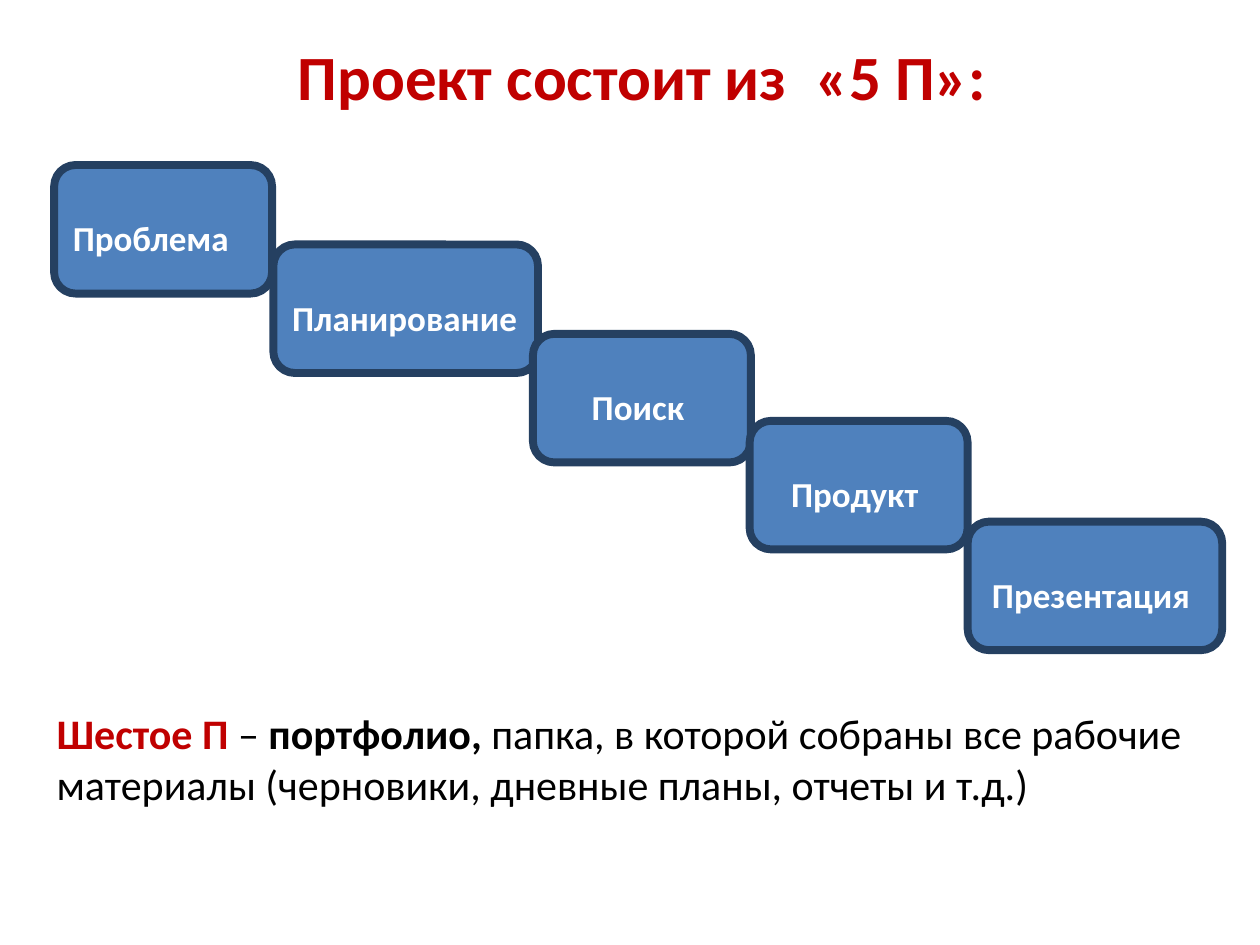
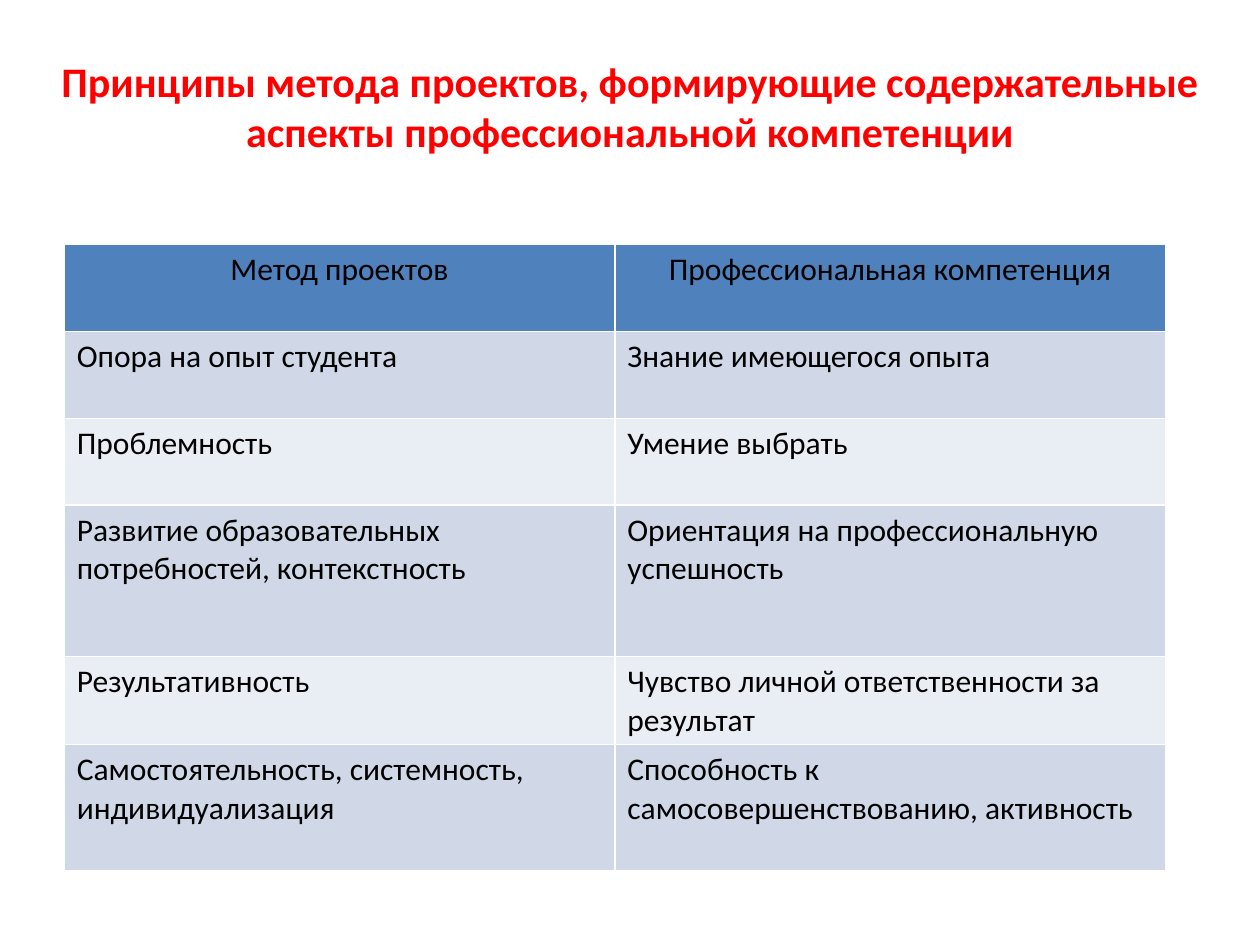
from pptx import Presentation
from pptx.dml.color import RGBColor
from pptx.enum.shapes import MSO_SHAPE as Shape
from pptx.enum.text import MSO_ANCHOR as Anchor, PP_ALIGN as Align
from pptx.util import Inches, Pt

FONT = "Calibri"
BLACK, WHITE = "000000", "FFFFFF"
DARK_RED, RED = "C00000", "FF0000"
BLUE, NAVY = "4F81BD", "254061"
BANDS = ("D0D8E8", "E9EDF4")


def rgb(value):
    return RGBColor.from_string(value)


def write(p, text, size=18, color=BLACK, bold=False, align=Align.LEFT):
    p.alignment = align
    r = p.add_run()
    r.text = text
    r.font.name = FONT
    r.font.size = Pt(size)
    r.font.bold = bold
    r.font.color.rgb = rgb(color)


class Deck:
    def __init__(self):
        self.prs = Presentation()
        self.prs.slide_width = Inches(10)
        self.prs.slide_height = Inches(7.5)
        self.s = None

    def slide(self):
        self.s = self.prs.slides.add_slide(self.prs.slide_layouts[6])

    def text(self, x, y, w, h):
        tf = self.s.shapes.add_textbox(*map(Inches, (x, y, w, h))).text_frame
        tf.word_wrap = True
        return tf.paragraphs[0]

    def title(self, text, x, y, w, h, size, color):
        write(self.text(x, y, w, h), text, size=size, color=color,
              bold=True, align=Align.CENTER)

    def step(self, text, x, y, w, align):
        sp = self.s.shapes.add_shape(
            Shape.ROUNDED_RECTANGLE, *map(Inches, (x, y, w, 1.02)))
        sp.shadow.inherit = False
        sp.fill.solid()
        sp.fill.fore_color.rgb = rgb(BLUE)
        sp.line.color.rgb = rgb(NAVY)
        sp.line.width = Pt(4.5)
        tf = sp.text_frame
        tf.word_wrap = True
        tf.vertical_anchor = Anchor.TOP
        tf.margin_top = Inches(0.36)
        write(tf.paragraphs[0], text, size=20, color=WHITE, bold=True, align=align)

    def table(self, rows, heights, x, y, w):
        shape = self.s.shapes.add_table(
            len(rows), len(rows[0]), *map(Inches, (x, y, w, sum(heights))))
        table = shape.table
        for i, (row, height) in enumerate(zip(rows, heights)):
            table.rows[i].height = Inches(height)
            for j, text in enumerate(row):
                cell = table.cell(i, j)
                cell.fill.solid()
                cell.fill.fore_color.rgb = rgb(BANDS[(i - 1) % 2] if i else BLUE)
                write(cell.text_frame.paragraphs[0], text,
                      align=Align.LEFT if i else Align.CENTER)


def five_steps(deck):
    deck.slide()
    deck.title("Проект состоит из  «5 П»: ", 0.35, 0.25, 9.61, 0.75, 36, DARK_RED)
    for step in (
        ("Проблема", 0.43, 1.31, 1.73, Align.LEFT),
        ("Планирование", 2.17, 1.94, 2.1, Align.LEFT),
        ("Поиск ", 4.23, 2.65, 1.73, Align.CENTER),
        ("Продукт ", 5.95, 3.34, 1.73, Align.CENTER),
        ("Презентация ", 7.68, 4.14, 2.02, Align.CENTER),
    ):
        deck.step(*step)
    p = deck.text(0.35, 5.57, 9.61, 1)
    for text, color, bold in (
        ("Шестое П", DARK_RED, True),
        (" – ", BLACK, False),
        ("портфолио, ", BLACK, True),
        ("папка, в которой собраны все рабочие материалы "
         "(черновики, дневные планы, отчеты и т.д.)", BLACK, False),
    ):
        write(p, text, size=24, color=color, bold=bold)


def principles(deck):
    deck.slide()
    deck.title("Принципы метода проектов, формирующие содержательные "
               "аспекты профессиональной компетенции",
               0.12, 0.39, 9.76, 1, 24, RED)
    rows = (
        ("Метод проектов", "Профессиональная компетенция"),
        ("Опора на опыт студента", "Знание имеющегося опыта"),
        ("Проблемность", "Умение выбрать"),
        ("Развитие образовательных потребностей, контекстность",
         "Ориентация на профессиональную успешность"),
        ("Результативность", "Чувство личной ответственности за результат"),
        ("Самостоятельность, системность, индивидуализация",
         "Способность к самосовершенствованию, активность"),
    )
    deck.table(rows, (0.69, 0.69, 0.69, 1.2, 0.7, 1), 0.51, 1.94, 8.74)


def main():
    deck = Deck()
    five_steps(deck)
    principles(deck)
    deck.prs.save("out.pptx")


if __name__ == "__main__":
    main()
